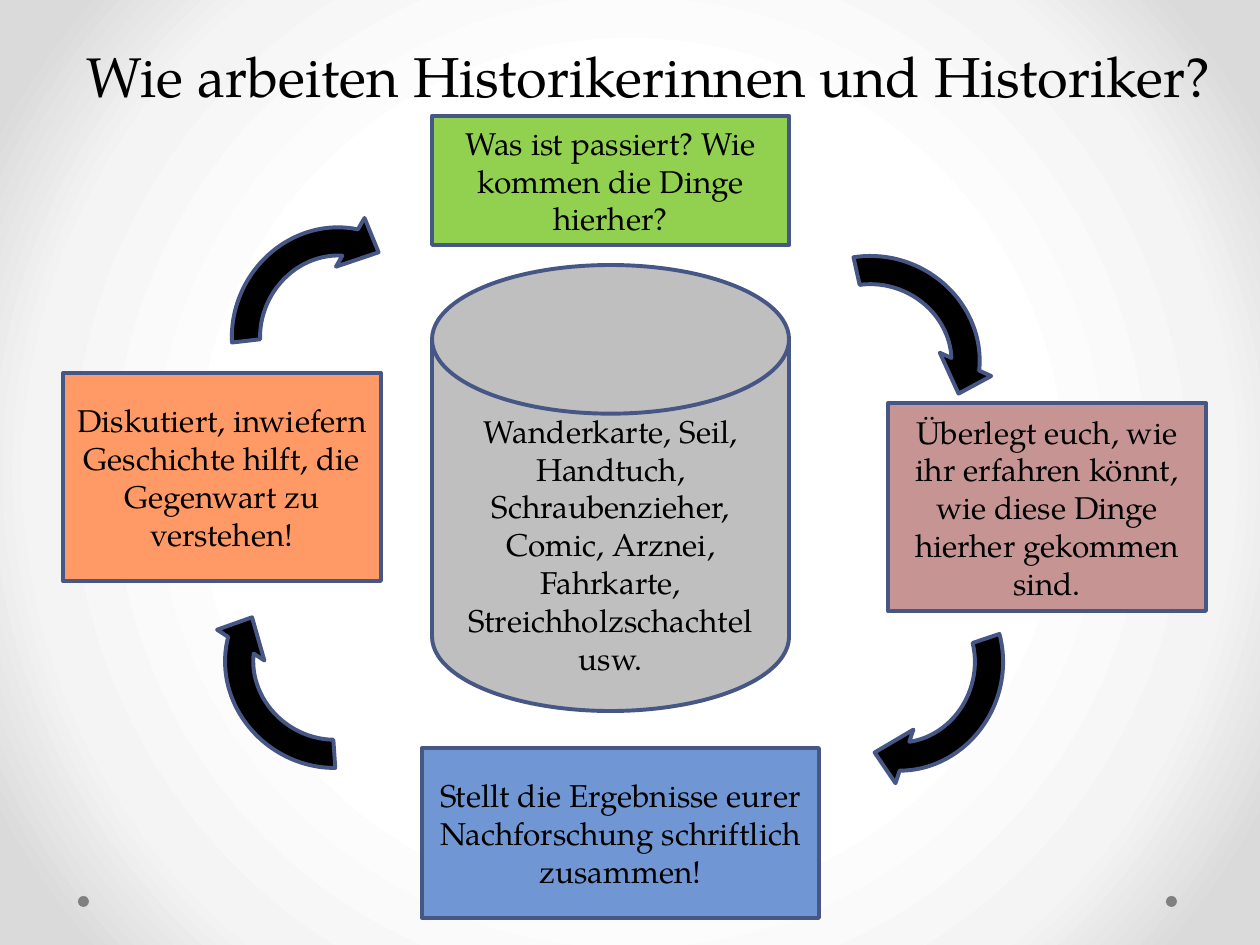
from lxml.etree import SubElement
from pptx import Presentation
from pptx.dml.color import RGBColor
from pptx.enum.shapes import MSO_SHAPE
from pptx.enum.text import MSO_ANCHOR, PP_ALIGN
from pptx.oxml.ns import qn
from pptx.util import Emu, Pt

FONT = "TeX Gyre Pagella"
BLACK = "000000"
OUTLINE = "475785"
STEP_SIZE = (318, 208)
ARROW_SIZE = (239, 226)
DOT_SIZE = (11, 11)

STEPS = [
    ((432, 116, 357, 129), "92D050", "Was ist passiert? Wie kommen die Dinge hierher?"),
    ((888, 403, *STEP_SIZE), "C79494",
     "Überlegt euch, wie ihr erfahren könnt, wie diese Dinge hierher gekommen sind."),
    ((422, 748, 397, 170), "7097D3",
     "Stellt die Ergebnisse eurer Nachforschung schriftlich zusammen!"),
    ((63, 373, *STEP_SIZE), "FF9966",
     "Diskutiert, inwiefern Geschichte hilft, die Gegenwart zu verstehen!"),
]
ARROWS = [(756, 243, 24.4), (784, 553, 108.5), (209, 554, 213.1), (213, 218, 300.4)]
FINDS = (
    "Wanderkarte, Seil, Handtuch, Schraubenzieher, Comic, Arznei, Fahrkarte, "
    "Streichholzschachtel\nusw."
)


def px(length):
    return Emu(round(length * 914400 / 126))


def color(hex_code):
    return RGBColor.from_string(hex_code)


def paint_background(slide):
    slide.background.fill.gradient()
    gradient = slide.element.find(".//" + qn("a:gradFill"))
    for part in list(gradient):
        gradient.remove(part)
    stops = SubElement(gradient, qn("a:gsLst"))
    for position, shade in [(50, "FFFFFF"), (76, "F4F4F4"), (92, "DADADA")]:
        stop = SubElement(stops, qn("a:gs"), pos=str(position * 1000))
        SubElement(stop, qn("a:srgbClr"), val=shade)
    radial = SubElement(gradient, qn("a:path"), attrib={"path": "circle"})
    SubElement(radial, qn("a:fillToRect"), l="50000", t="50000", r="50000", b="50000")


def add_figure(slide, kind, box, fill, outline=OUTLINE):
    figure = slide.shapes.add_shape(kind, *map(px, box))
    figure.shadow.inherit = False
    figure.fill.solid()
    figure.fill.fore_color.rgb = color(fill)
    if outline:
        figure.line.color.rgb = color(outline)
        figure.line.width = Pt(2.25)
    else:
        figure.line.fill.background()
    return figure


def write(figure, text, size=18, anchor=MSO_ANCHOR.MIDDLE):
    frame = figure.text_frame
    frame.text = text
    frame.word_wrap = True
    frame.vertical_anchor = anchor
    for paragraph in frame.paragraphs:
        paragraph.alignment = PP_ALIGN.CENTER
        for run in paragraph.runs:
            run.font.name = FONT
            run.font.size = Pt(size)
            run.font.color.rgb = color(BLACK)
    return frame


def add_cycle_arrow(slide, left, top, angle):
    arrow = add_figure(slide, MSO_SHAPE.CIRCULAR_ARROW, (left, top, *ARROW_SIZE), BLACK)
    for index, value in enumerate([0.125, 11.423, 204.577, 139.845, 0.125]):
        arrow.adjustments[index] = value
    arrow.rotation = angle


def add_title(slide, text):
    title = slide.shapes.add_textbox(*map(px, (63, 38, 1172, 77)))
    frame = write(title, text, 32, MSO_ANCHOR.BOTTOM)
    frame.paragraphs[0].line_spacing = Pt(58)


def main():
    presentation = Presentation()
    presentation.slide_width = px(1260)
    presentation.slide_height = px(945)
    slide = presentation.slides.add_slide(presentation.slide_layouts[6])
    paint_background(slide)

    for left in (1166, 78):
        add_figure(slide, MSO_SHAPE.OVAL, (left, 896, *DOT_SIZE), "808080", None)
    for box, fill, task in STEPS:
        write(add_figure(slide, MSO_SHAPE.RECTANGLE, box, fill), task)
    for left, top, angle in ARROWS:
        add_cycle_arrow(slide, left, top, angle)

    finds = add_figure(slide, MSO_SHAPE.FLOWCHART_MAGNETIC_DISK, (432, 265, 357, 446), "BFBFBF")
    write(finds, FINDS).margin_top = px(44)
    add_title(slide, "Wie arbeiten Historikerinnen und Historiker?")
    presentation.save("out.pptx")


if __name__ == "__main__":
    main()
